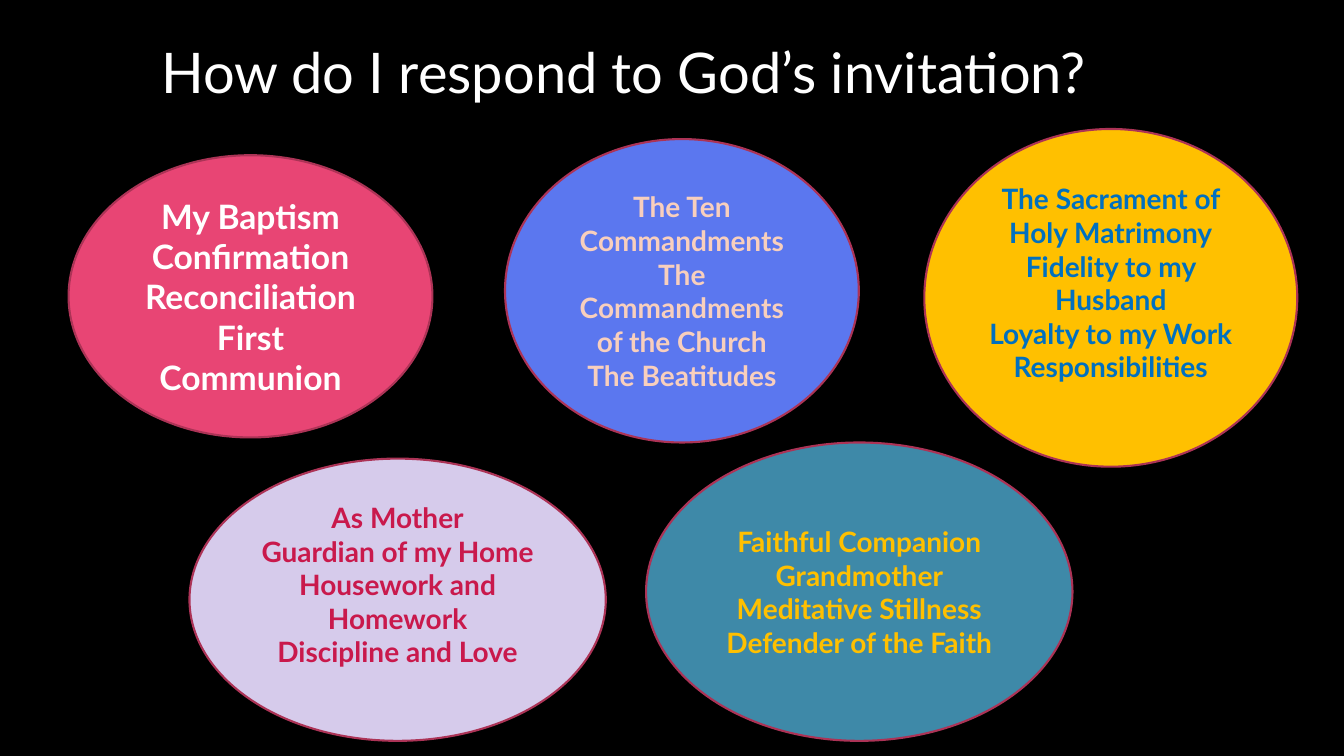
from dataclasses import dataclass

from pptx import Presentation
from pptx.dml.color import RGBColor
from pptx.enum.shapes import MSO_SHAPE
from pptx.enum.text import MSO_ANCHOR, MSO_AUTO_SIZE, PP_ALIGN
from pptx.util import Inches, Pt


@dataclass(frozen=True)
class Theme:
    font: str = "Lato"
    black: str = "000000"
    white: str = "FFFFFF"
    outline: str = "AC3356"
    rose: str = "E84574"
    blue: str = "5B77EF"
    peach: str = "F8CFBD"
    gold: str = "FFC000"
    azure: str = "0070C0"
    lilac: str = "D6CBEB"
    crimson: str = "C9194C"
    teal: str = "3E89A8"
    title: int = 40
    large: int = 24
    body: int = 20
    stroke: float = 1.5


def set_all(target, values):
    for name, value in values.items():
        setattr(target, name, value)


class Deck:
    """Holds the theme and the current slide; places things on a 40 x 30 grid."""

    COLS, ROWS = 40, 30

    def __init__(self, theme):
        self.theme = theme
        self.prs = Presentation()
        set_all(self.prs, {"slide_width": Inches(13.33), "slide_height": Inches(7.5)})

    def new_slide(self, background):
        self.s = self.prs.slides.add_slide(self.prs.slide_layouts[5])
        self.paint(self.s.background.fill, background)

    def box(self, left, top, width, height):
        col = self.prs.slide_width / self.COLS
        row = self.prs.slide_height / self.ROWS
        return {"left": round(left * col), "top": round(top * row),
                "width": round(width * col), "height": round(height * row)}

    def paint(self, fill, color):
        fill.solid()
        fill.fore_color.rgb = RGBColor.from_string(color)

    def fill_text(self, tf, lines, size, color, align, bold=False):
        tf.text = "\n".join(lines)
        for p in tf.paragraphs:
            p.alignment = align
            for r in p.runs:
                set_all(r.font, {"name": self.theme.font, "size": Pt(size), "bold": bold})
                r.font.color.rgb = RGBColor.from_string(color)

    def title(self, text, grid):
        sp = self.s.shapes.title
        set_all(sp, self.box(*grid))
        tf = sp.text_frame
        self.fill_text(tf, [text], self.theme.title, self.theme.white, PP_ALIGN.LEFT)
        set_all(tf, {"word_wrap": True, "vertical_anchor": MSO_ANCHOR.TOP,
                     "auto_size": MSO_AUTO_SIZE.SHAPE_TO_FIT_TEXT})

    def ellipse(self, grid, fill, color, size, lines, lift=0):
        """Draw an oval of centred lines; lift is extra room below them in inches."""
        sp = self.s.shapes.add_shape(MSO_SHAPE.OVAL, **self.box(*grid))
        sp.shadow.inherit = False
        self.paint(sp.fill, fill)
        self.paint(sp.line.fill, self.theme.outline)
        sp.line.width = Pt(self.theme.stroke)
        tf = sp.text_frame
        set_all(tf, {"word_wrap": True, "vertical_anchor": MSO_ANCHOR.MIDDLE,
                     "margin_bottom": Inches(0.05 + lift)})
        self.fill_text(tf, lines, size, color, PP_ALIGN.CENTER, bold=True)


def main():
    t = Theme()
    deck = Deck(t)
    deck.new_slide(t.black)

    # Title
    deck.title("How do I respond to God’s invitation?", (4.5, 1.28, 31, 3.08))

    # Upper row: sacraments, commandments, marriage
    deck.ellipse((2.04, 6.16, 10.83, 11.2), t.rose, t.white, t.large,
                 ["My Baptism", "Confirmation", "Reconciliation", "First Communion"])
    deck.ellipse((15.03, 5.52, 10.53, 12.04), t.blue, t.peach, t.body,
                 ["The Ten Commandments", "The Commandments of the Church",
                  "The Beatitudes"])
    deck.ellipse((27.51, 5.12, 11.1, 13.4), t.gold, t.azure, t.body,
                 ["The Sacrament of Holy Matrimony", "Fidelity to my Husband",
                  "Loyalty to my Work Responsibilities"], lift=0.3)

    # Lower row: motherhood, companionship
    deck.ellipse((5.64, 18.2, 12.39, 11.2), t.lilac, t.crimson, t.body,
                 ["As Mother", "Guardian of my Home", "Housework and Homework",
                  "Discipline and Love"], lift=0.3)
    deck.ellipse((19.23, 17.56, 12.69, 11.84), t.teal, t.gold, t.body,
                 ["Faithful Companion", "Grandmother", "Meditative Stillness",
                  "Defender of the Faith"])

    deck.prs.save("out.pptx")


if __name__ == "__main__":
    main()
